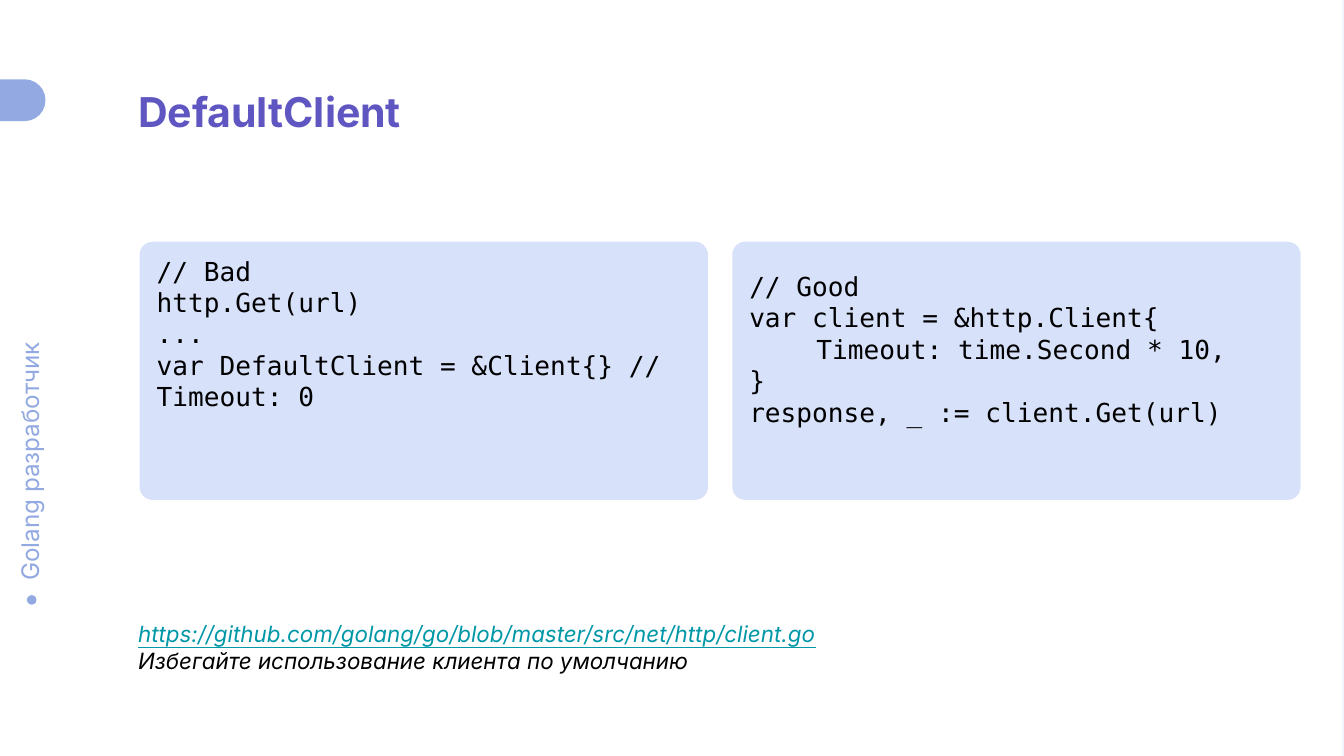
from pptx import Presentation
from pptx.dml.color import RGBColor
from pptx.enum.shapes import MSO_SHAPE
from pptx.enum.text import MSO_ANCHOR, MSO_AUTO_SIZE, PP_ALIGN
from pptx.util import Cm, Pt

RECTANGLE = MSO_SHAPE.RECTANGLE
OVAL = MSO_SHAPE.OVAL
ROUNDED = MSO_SHAPE.ROUNDED_RECTANGLE
TOP = MSO_ANCHOR.TOP
MIDDLE = MSO_ANCHOR.MIDDLE
LEFT = PP_ALIGN.LEFT
NO_AUTOFIT = MSO_AUTO_SIZE.NONE

BACKGROUND = RGBColor(0xF1, 0xF4, 0xFF)
WHITE = RGBColor(0xFF, 0xFF, 0xFF)
BLACK = RGBColor(0x00, 0x00, 0x00)
PERIWINKLE = RGBColor(0x92, 0xA9, 0xE2)
PANEL_BLUE = RGBColor(0xD7, 0xE1, 0xF9)
PURPLE = RGBColor(0x60, 0x56, 0xC2)
TEAL = RGBColor(0x00, 0x97, 0xA7)

CODE_FONT = {"name": "DejaVu Sans Mono", "size": Pt(14)}
TITLE_FONT = {"name": "Inter", "size": Pt(22), "bold": True}
COURSE_FONT = {"name": "Inter", "size": Pt(13)}
NOTE_FONT = {"name": "Inter", "size": Pt(12), "italic": True}
LINK_FONT = {**NOTE_FONT, "underline": True}

PANEL_LEFT, PANEL_TOP = 2.64, 4.57
PANEL_WIDTH, PANEL_HEIGHT = 10.74, 4.88
PANEL_STEP = 11.2
CODE_INDENT = Cm(1.27)

BAD_CODE = [
    "// Bad",
    "http.Get(url)",
    "...",
    "var DefaultClient = &Client{} // Timeout: 0",
]
GOOD_CODE = [
    "// Good",
    "var client = &http.Client{",
    "\tTimeout: time.Second * 10,",
    "}",
    "response, _ := client.Get(url)",
]


def apply_format(target, values):
    for attribute, value in values.items():
        setattr(target, attribute, value)


def format_frame(frame, anchor, side, top, bottom):
    apply_format(frame, {
        "word_wrap": True,
        "auto_size": NO_AUTOFIT,
        "vertical_anchor": anchor,
        "margin_left": Cm(side),
        "margin_right": Cm(side),
        "margin_top": Cm(top),
        "margin_bottom": Cm(bottom),
    })


def write_lines(frame, lines):
    for number, (text, font, color) in enumerate(lines):
        paragraph = frame.paragraphs[0] if number == 0 else frame.add_paragraph()
        paragraph.alignment = LEFT
        if text.startswith("\t"):
            paragraph._p.get_or_add_pPr().set("indent", str(CODE_INDENT))
        run = paragraph.add_run()
        run.text = text.strip()
        apply_format(run.font, font)
        run.font.color.rgb = color


def add_block(slide, kind, box, color, rounding=None):
    block = slide.shapes.add_shape(kind, *map(Cm, box))
    block.shadow.inherit = False
    block.fill.solid()
    block.fill.fore_color.rgb = color
    block.line.fill.background()
    if rounding is not None:
        block.adjustments[0] = rounding
    return block


def add_label(slide, box, lines):
    label = slide.shapes.add_textbox(*map(Cm, box))
    format_frame(label.text_frame, TOP, 0.25, 0.25, 0.25)
    write_lines(label.text_frame, lines)
    return label


def add_code_panel(slide, column, code):
    box = (PANEL_LEFT + column * PANEL_STEP, PANEL_TOP, PANEL_WIDTH, PANEL_HEIGHT)
    panel = add_block(slide, ROUNDED, box, PANEL_BLUE, 0.05)
    missing_lines = 6 - len(code)
    format_frame(panel.text_frame, MIDDLE, 0.25, 0, 0.25 + 0.58 * missing_lines)
    write_lines(panel.text_frame, [(line, CODE_FONT, BLACK) for line in code])


def add_sidebar(slide):
    course = add_label(slide, (-1.96, 8.15, 5.08, 1.07),
                       [("Golang разработчик", COURSE_FONT, PERIWINKLE)])
    course.rotation = 270
    add_block(slide, OVAL, (0.51, 11.25, 0.18, 0.18), PERIWINKLE)
    add_block(slide, ROUNDED, (-0.97, 1.5, 1.83, 0.79), PERIWINKLE, 0.5)


def set_title(slide, text):
    title = slide.shapes.title
    apply_format(title, {
        "left": Cm(2.36), "top": Cm(1.5), "width": Cm(15.54), "height": Cm(1.19),
    })
    format_frame(title.text_frame, TOP, 0.25, 0.13, 0.13)
    write_lines(title.text_frame, [(text, TITLE_FONT, PURPLE)])


def main():
    deck = Presentation()
    deck.slide_width, deck.slide_height = Cm(25.4), Cm(14.29)
    slide = deck.slides.add_slide(deck.slide_layouts[5])
    slide.background.fill.solid()
    slide.background.fill.fore_color.rgb = BACKGROUND

    page = add_block(slide, RECTANGLE, (-0.03, 0, 25.4, 14.29), WHITE)
    slide.shapes.title._element.addprevious(page._element)
    add_sidebar(slide)
    set_title(slide, "DefaultClient")
    for column, code in enumerate((BAD_CODE, GOOD_CODE)):
        add_code_panel(slide, column, code)
    add_label(slide, (2.36, 11.48, 15.27, 1.55), [
        ("https://github.com/golang/go/blob/master/src/net/http/client.go", LINK_FONT, TEAL),
        ("Избегайте использование клиента по умолчанию", NOTE_FONT, BLACK),
    ])
    deck.save("out.pptx")


if __name__ == "__main__":
    main()
